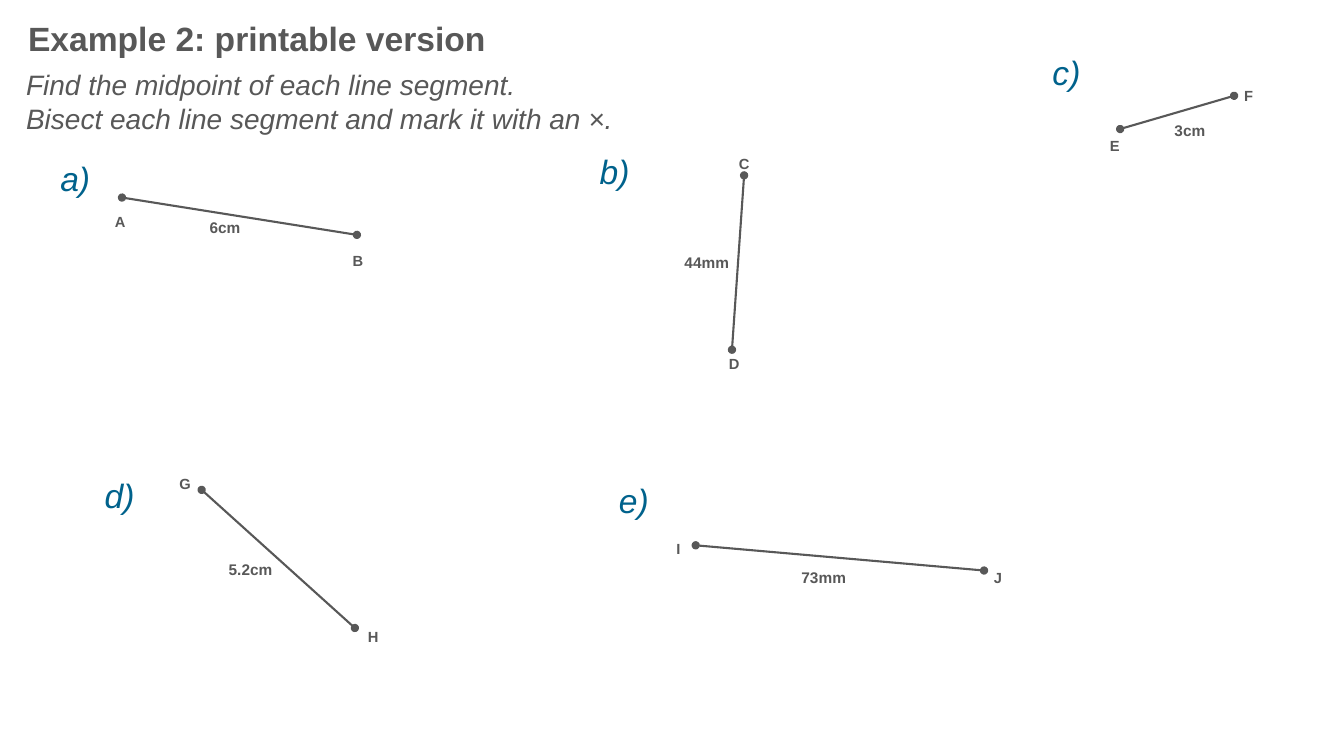
from lxml import etree
from pptx import Presentation
from pptx.dml.color import RGBColor
from pptx.enum.shapes import MSO_CONNECTOR
from pptx.enum.text import MSO_AUTO_SIZE
from pptx.oxml.ns import qn
from pptx.util import Pt

PX = 9144  # EMU per px, 100 px to the inch
STRAIGHT = MSO_CONNECTOR.STRAIGHT
GROW = MSO_AUTO_SIZE.SHAPE_TO_FIT_TEXT
GREY = RGBColor.from_string("585858")
BLUE = RGBColor.from_string("00628C")

THEME = {
    "title": {"size": Pt(24), "bold": True, "color": GREY},
    "task": {"size": Pt(20), "italic": True, "color": GREY},
    "tag": {"size": Pt(24), "italic": True, "color": BLUE},
    "point": {"size": Pt(10.5), "bold": True, "color": GREY},
    "length": {"size": Pt(11), "bold": True, "color": GREY},
}


def write(shapes, lines, box, style, wrap=False):
    """Add a text box with one paragraph per line."""
    frame = shapes.add_textbox(*(n * PX for n in box)).text_frame
    frame.word_wrap = wrap
    frame.auto_size = GROW
    for i, line in enumerate(lines):
        para = frame.add_paragraph() if i else frame.paragraphs[0]
        run = para.add_run()
        run.text = line
        run.font.name = "Arial"
        for key, value in THEME[style].items():
            if key == "color":
                run.font.color.rgb = value
            else:
                setattr(run.font, key, value)


def join(shapes, ends):
    """Draw a segment with a dot at both ends."""
    line = shapes.add_connector(STRAIGHT, *(n * PX for n in ends))
    line.line.color.rgb = GREY
    line.line.width = Pt(1.5)
    stroke = line.line._get_or_add_ln()
    for end in ("a:headEnd", "a:tailEnd"):
        etree.SubElement(stroke, qn(end), type="oval")
    etree.SubElement(line._element.spPr, qn("a:effectLst"))


deck = Presentation()
deck.slide_width, deck.slide_height = 1333 * PX, 750 * PX
slide = deck.slides.add_slide(deck.slide_layouts[6])

# Heading and task
write(slide.shapes, ["Example 2: printable version"], (18, 13, 666, 50), "title", True)
task = ["Find the midpoint of each line segment.",
        "Bisect each line segment and mark it with an ×."]
write(slide.shapes, task, (16, 62, 961, 77), "task", True)

# Segments: tag and its place, ends, then each label with left, top, width
parts = [
    ("a)", (50, 152, 50), (121, 196, 354, 233),
     ("A", (104, 206, 31)), ("B", (340, 245, 31)), ("6cm", (198, 211, 51))),
    ("b)", (585, 145, 50), (738, 174, 726, 347),
     ("C", (723, 149, 31)), ("D", (713, 347, 31)), ("44mm", (669, 246, 65))),
    ("c)", (1034, 47, 48), (1111, 128, 1224, 95),
     ("E", (1091, 131, 31)), ("F", (1224, 81, 29)), ("3cm", (1155, 115, 51))),
    ("d)", (94, 466, 50), (200, 486, 352, 623),
     ("G", (168, 466, 32)), ("H", (355, 618, 31)), ("5.2cm", (217, 551, 64))),
    ("e)", (604, 471, 50), (690, 541, 976, 566),
     ("I", (661, 531, 24)), ("J", (976, 559, 28)), ("73mm", (785, 559, 65))),
]

for tag, spot, ends, first, last, length in parts:
    write(slide.shapes, [tag], (*spot, 50), "tag")
    group = slide.shapes.add_group_shape().shapes
    join(group, ends)
    for name, place in (first, last):
        write(group, [name], (*place, 28), "point")
    write(group, [length[0]], (*length[1], 29), "length")

deck.save("out.pptx")
